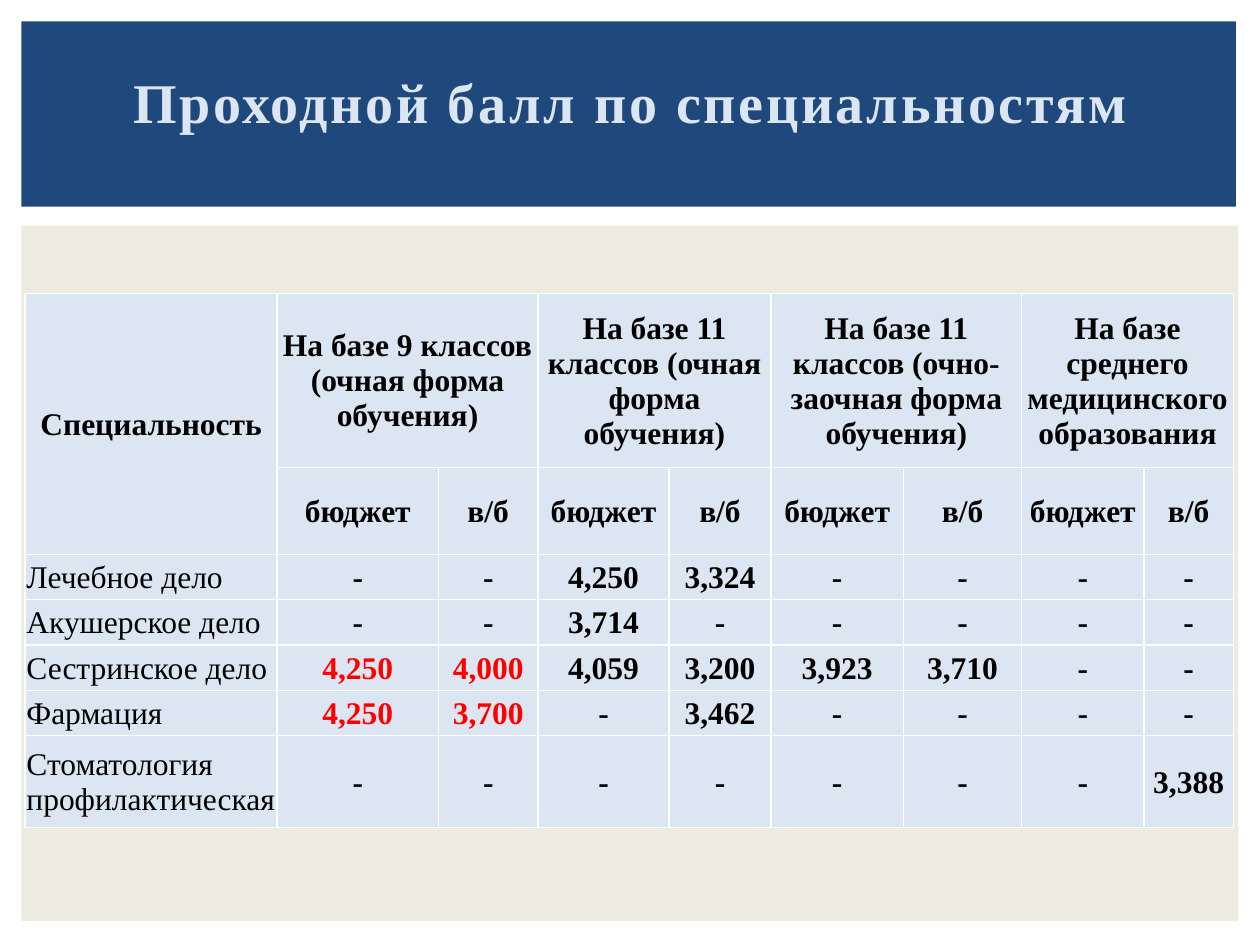
from dataclasses import dataclass

from lxml import etree
from pptx import Presentation
from pptx import util as u
from pptx.dml.color import RGBColor
from pptx.enum import shapes, text
from pptx.oxml import ns

HUES = {"navy": "1F497D", "sand": "EEECE1", "pale": "DCE6F2",
        "white": "FFFFFF", "black": "000000", "red": "FF0000"}
FACE = "Times New Roman"
COLS = [2, 1.28, 0.79, 1.04, 0.81, 1.05, 0.94, 0.97, 0.71]
ROWS = [1.38, 0.69, 0.36, 0.36, 0.36, 0.36, 0.73]
BASES = ["На базе 9 классов (очная форма обучения)",
         "На базе 11 классов (очная форма обучения)",
         "На базе 11 классов (очно-заочная форма обучения)",
         "На базе среднего медицинского образования"]
KINDS = ["бюджет", "в/б"]
INSETS = {"margin_left": 0.01, "margin_right": 0.01,
          "margin_top": 0.01, "margin_bottom": 0}


@dataclass
class Panel:
    left: float
    top: float
    width: float
    height: float
    hue: str


@dataclass
class Major:
    name: str
    marks: list[str]


PANELS = [Panel(0.17, 1.79, 9.66, 5.52, "sand"),
          Panel(0.17, 0.17, 9.64, 1.47, "navy")]
MAJORS = [
    Major("Лечебное дело", "- - 4,250 3,324 - - - -".split()),
    Major("Акушерское дело", "- - 3,714 - - - - -".split()),
    Major("Сестринское дело", "4,250 4,000 4,059 3,200 3,923 3,710 - -".split()),
    Major("Фармация", "4,250 3,700 - 3,462 - - - -".split()),
    Major("Стоматология профилактическая", "- - - - - - - 3,388".split()),
]


def tint(hue: str) -> RGBColor:
    """Return the colour with this name."""
    return RGBColor.from_string(HUES[hue])


def write(para, words: str, size: float, hue: str, bold: bool = True,
          align=text.PP_ALIGN.CENTER):
    """Fill a paragraph with one styled run and return the run."""
    para.alignment = align
    run = para.add_run()
    run.text = words
    look = {"name": FACE, "size": u.Pt(size), "bold": bold}
    for key, value in look.items():
        setattr(run.font, key, value)
    run.font.color.rgb = tint(hue)
    return run


def draw_panel(slide, panel: Panel) -> None:
    """Draw a plain filled rectangle."""
    box = slide.shapes.add_shape(
        shapes.MSO_SHAPE.RECTANGLE, u.Inches(panel.left), u.Inches(panel.top),
        u.Inches(panel.width), u.Inches(panel.height))
    box.shadow.inherit = False
    box.fill.solid()
    box.fill.fore_color.rgb = tint(panel.hue)
    box.line.fill.background()


def draw_title(slide) -> None:
    """Draw the letter-spaced heading."""
    box = slide.shapes.add_textbox(
        u.Inches(0.34), u.Inches(0.49), u.Inches(9.21), u.Inches(0.82))
    box.text_frame.word_wrap = True
    para = box.text_frame.paragraphs[0]
    run = write(para, "Проходной балл по специальностям", 32, "pale")
    para._p.get_or_add_pPr().set("marL", str(u.Inches(0.12)))
    run.font._element.set("spc", "150")


def add_edges(cell) -> None:
    """Put white one-point lines around a cell."""
    props = cell._tc.get_or_add_tcPr()
    for spot, side in enumerate(("lnL", "lnR", "lnT", "lnB")):
        line = etree.Element(ns.qn(f"a:{side}"), w=str(u.Pt(1)))
        fill = etree.SubElement(line, ns.qn("a:solidFill"))
        etree.SubElement(fill, ns.qn("a:srgbClr"), val=HUES["white"])
        props.insert(spot, line)


def fill_cell(cell, words: str, hue: str = "black", bold: bool = True,
              align=text.PP_ALIGN.CENTER) -> None:
    """Write one table cell."""
    write(cell.text_frame.paragraphs[0], words, 18, hue, bold, align)


def draw_table(slide) -> None:
    """Draw the table of passing scores."""
    grid = slide.shapes.add_table(
        len(ROWS), len(COLS), u.Inches(0.2), u.Inches(2.33),
        u.Inches(sum(COLS)), u.Inches(sum(ROWS))).table
    for col, width in zip(grid.columns, COLS):
        col.width = u.Inches(width)
    for row, height in zip(grid.rows, ROWS):
        row.height = u.Inches(height)
    for cell in grid.iter_cells():
        cell.fill.solid()
        cell.fill.fore_color.rgb = tint("pale")
        cell.vertical_anchor = text.MSO_ANCHOR.MIDDLE
        for key, value in INSETS.items():
            setattr(cell, key, u.Inches(value))
        add_edges(cell)

    grid.cell(0, 0).merge(grid.cell(1, 0))
    fill_cell(grid.cell(0, 0), "Специальность")
    for i, base in enumerate(BASES):
        left = 1 + 2 * i
        grid.cell(0, left).merge(grid.cell(0, left + 1))
        fill_cell(grid.cell(0, left), base)
        for j, kind in enumerate(KINDS):
            fill_cell(grid.cell(1, left + j), kind)
    for r, major in enumerate(MAJORS, 2):
        fill_cell(grid.cell(r, 0), major.name, bold=False, align=text.PP_ALIGN.LEFT)
        for c, mark in enumerate(major.marks, 1):
            hue = "red" if c <= 2 and mark != "-" else "black"
            fill_cell(grid.cell(r, c), mark, hue)


def main() -> None:
    """Build and save the slide."""
    deck = Presentation()
    deck.slide_width, deck.slide_height = u.Inches(10), u.Inches(7.5)
    slide = deck.slides.add_slide(deck.slide_layouts[6])
    for panel in PANELS:
        draw_panel(slide, panel)
    draw_title(slide)
    draw_table(slide)
    deck.save("out.pptx")


if __name__ == "__main__":
    main()
